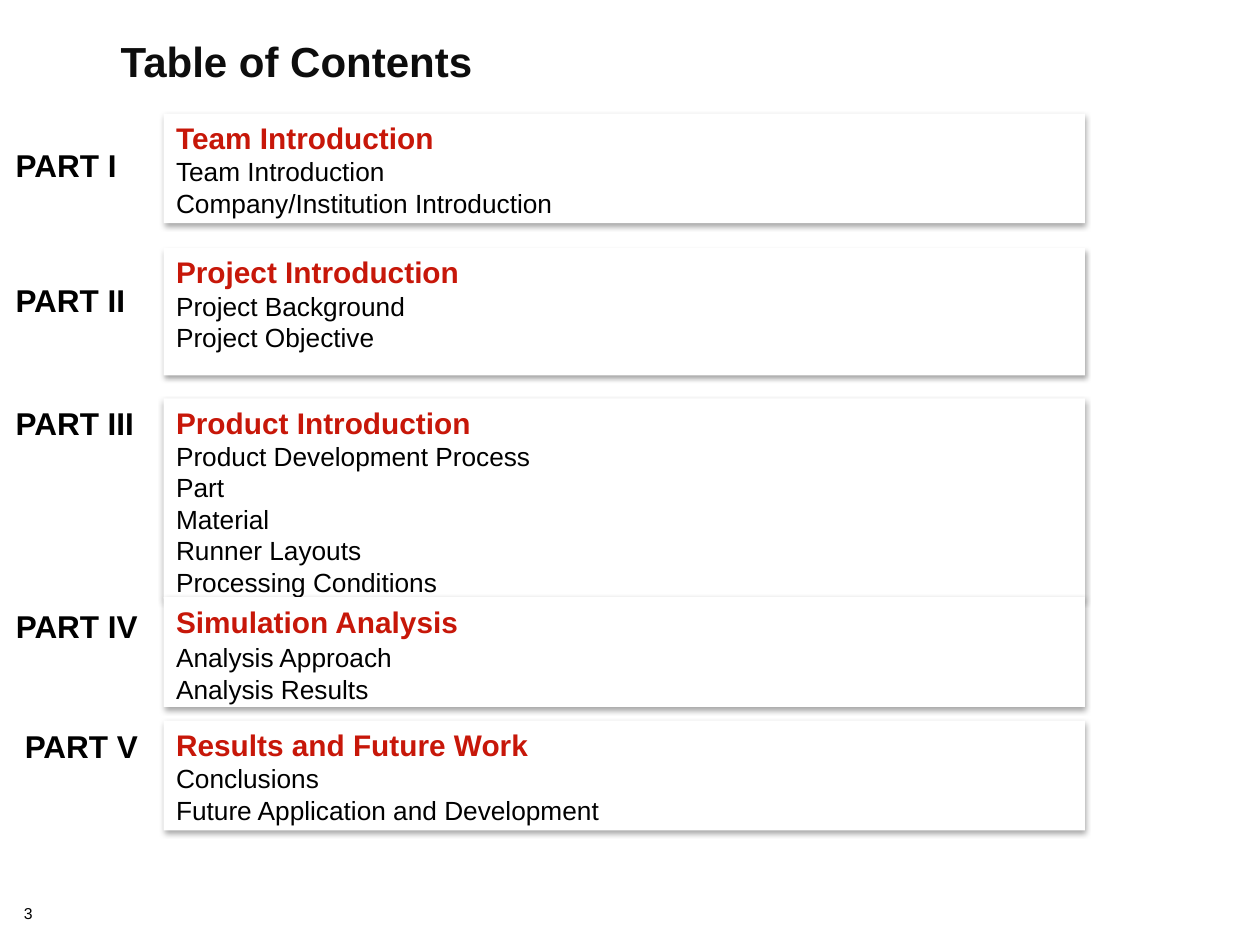
from dataclasses import dataclass

from lxml import etree
from pptx import Presentation
from pptx import util as u
from pptx.dml.color import RGBColor
from pptx.enum import shapes, text
from pptx.oxml import ns


@dataclass(frozen=True)
class Theme:
    font: str = "Arial"
    title_color: str = "0D0D0D"
    heading_color: str = "C71709"
    text_color: str = "000000"
    panel_color: str = "FFFFFF"
    title_size: int = 24
    label_size: int = 18
    heading_size: int = 17
    item_size: int = 15
    number_size: int = 9


THEME = Theme()
PANEL_LEFT, PANEL_WIDTH = 3.3, 18.57
LABEL_HEIGHT = 1.02

# Panel top and height, label (text, left, top, width), heading, items; in cm
PARTS = [
    (2.29, 2.21, ("PART I", 0.05, 2.82, 2.57), "Team Introduction",
     ["Team Introduction", "Company/Institution Introduction"]),
    (5.0, 2.57, ("PART II", 0.05, 5.54, 2.74), "Project Introduction",
     ["Project Background", "Project Objective"]),
    (8.03, 4.04, ("PART III", 0.05, 8.03, 2.92), "Product Introduction",
     ["Product Development Process", "Part", "Material",
      "Runner Layouts", "Processing Conditions"]),
    (12.04, 2.21, ("PART IV", 0.05, 12.12, 3.0), "Simulation Analysis",
     ["Analysis Approach", "Analysis Results"]),
    (14.53, 2.21, ("PART V", 0.23, 14.53, 2.82), "Results and Future Work",
     ["Conclusions", "Future Application and Development"]),
]


def box(left, top, width, height):
    return [u.Cm(v) for v in (left, top, width, height)]


def format_runs(p, size, color, bold=False):
    for r in p.runs:
        r.font.name = THEME.font
        r.font.size = u.Pt(size)
        r.font.bold = bold
        r.font.color.rgb = RGBColor.from_string(color)


def add_shadow(sp):
    """Give a shape a soft shadow that falls straight down."""
    sp.shadow.inherit = False
    effects = sp._element.spPr.find(ns.qn("a:effectLst"))
    shadow = etree.SubElement(
        effects, ns.qn("a:outerShdw"), blurRad=str(u.Pt(3.1)),
        dist=str(u.Pt(1.8)), dir="5400000", rotWithShape="0")
    color = etree.SubElement(shadow, ns.qn("a:srgbClr"), val="000000")
    etree.SubElement(color, ns.qn("a:alpha"), val="35000")


def add_title(s, title):
    sp = s.shapes.title
    sp.left, sp.top, sp.width, sp.height = box(2.18, 0.33, 16.61, 1.8)
    tf = sp.text_frame
    tf.text = title
    tf.auto_size = text.MSO_AUTO_SIZE.NONE
    tf.vertical_anchor = text.MSO_ANCHOR.MIDDLE
    p = tf.paragraphs[0]
    p.alignment = text.PP_ALIGN.LEFT
    format_runs(p, THEME.title_size, THEME.title_color, bold=True)


def add_panel(s, top, height, heading, items):
    sp = s.shapes.add_shape(shapes.MSO_SHAPE.RECTANGLE,
                            *box(PANEL_LEFT, top, PANEL_WIDTH, height))
    sp.fill.solid()
    sp.fill.fore_color.rgb = RGBColor.from_string(THEME.panel_color)
    sp.line.fill.background()
    add_shadow(sp)
    tf = sp.text_frame
    tf.word_wrap = True
    tf.vertical_anchor = text.MSO_ANCHOR.TOP
    tf.text = "\n".join([heading, *items])
    for p in tf.paragraphs:
        p.alignment = text.PP_ALIGN.LEFT
        format_runs(p, THEME.item_size, THEME.text_color)
    format_runs(tf.paragraphs[0], THEME.heading_size, THEME.heading_color, bold=True)
    return tf


def add_label(s, label, left, top, width):
    tf = s.shapes.add_textbox(*box(left, top, width, LABEL_HEIGHT)).text_frame
    tf.text = label
    tf.word_wrap = False
    tf.auto_size = text.MSO_AUTO_SIZE.SHAPE_TO_FIT_TEXT
    p = tf.paragraphs[0]
    p.alignment = text.PP_ALIGN.CENTER
    format_runs(p, THEME.label_size, THEME.text_color, bold=True)


def add_slide_number(s, number):
    tf = s.shapes.add_textbox(*box(0.23, 18.14, 2.06, 0.53)).text_frame
    tf.text = number
    tf.word_wrap = True
    tf.margin_top = tf.margin_bottom = 0
    tf.vertical_anchor = text.MSO_ANCHOR.MIDDLE
    format_runs(tf.paragraphs[0], THEME.number_size, THEME.text_color)


def main():
    prs = Presentation()
    prs.slide_width, prs.slide_height = u.Cm(25.4), u.Cm(19.05)
    s = prs.slides.add_slide(prs.slide_layouts[5])

    # Title and slide number
    add_slide_number(s, "3")
    add_title(s, "Table of Contents")

    # One panel and one label for each part
    for top, height, label, heading, items in PARTS:
        tf = add_panel(s, top, height, heading, items)
        add_label(s, *label)
        if heading == "Simulation Analysis":
            first_item = tf.paragraphs[1]
            first_item.line_spacing = 0.9
            first_item.space_before = u.Pt(3)

    prs.save("out.pptx")


if __name__ == "__main__":
    main()
